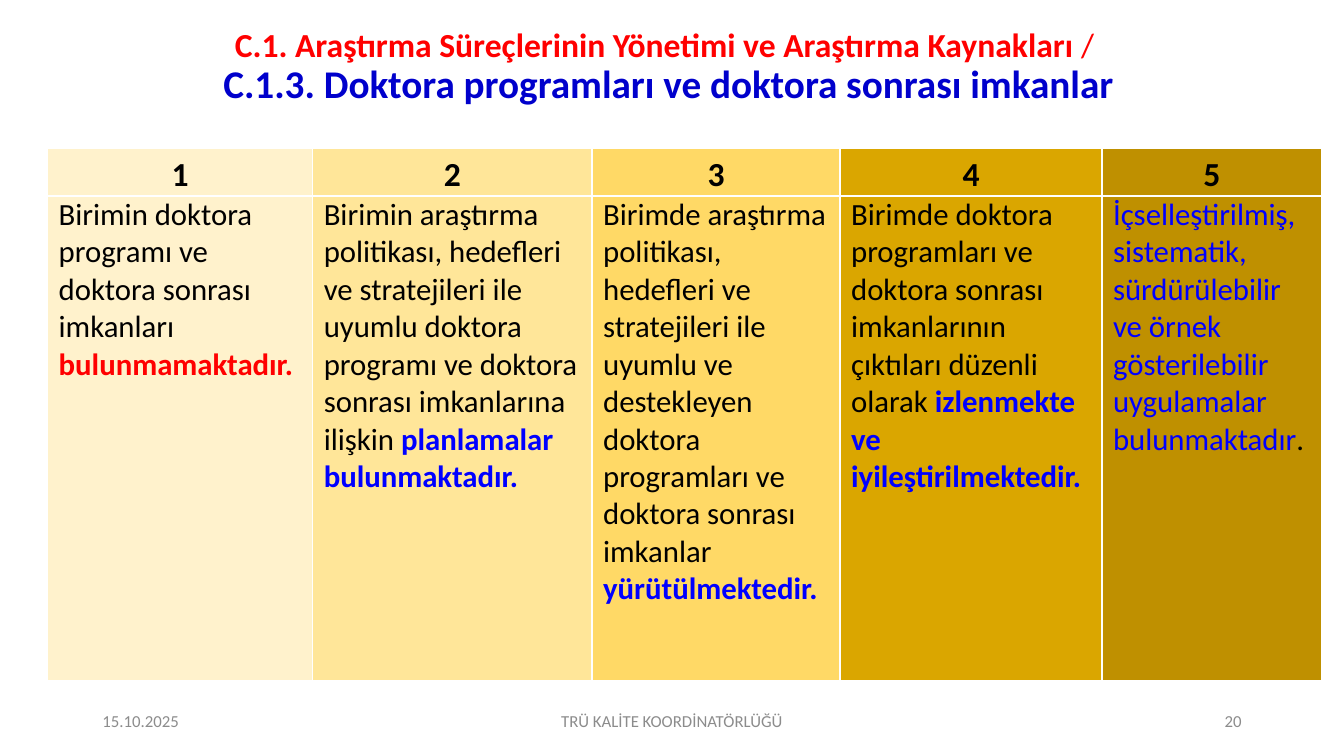
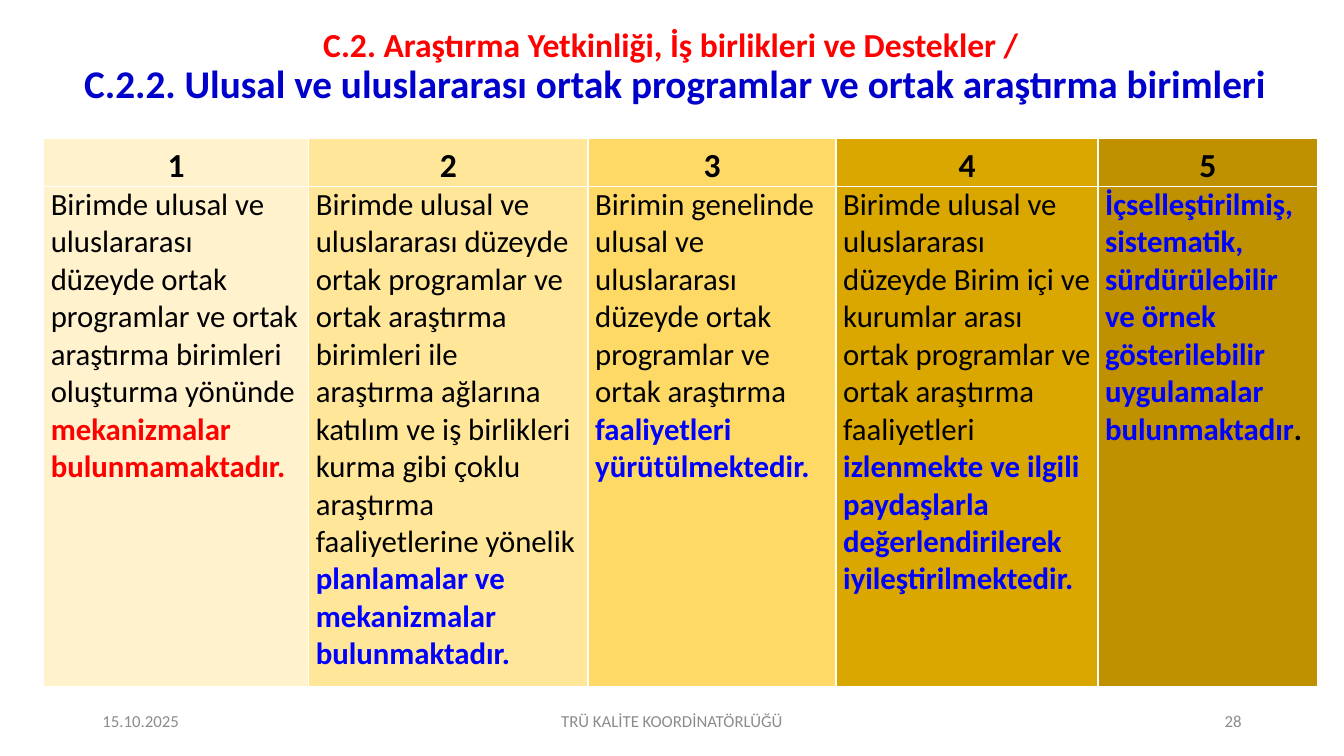
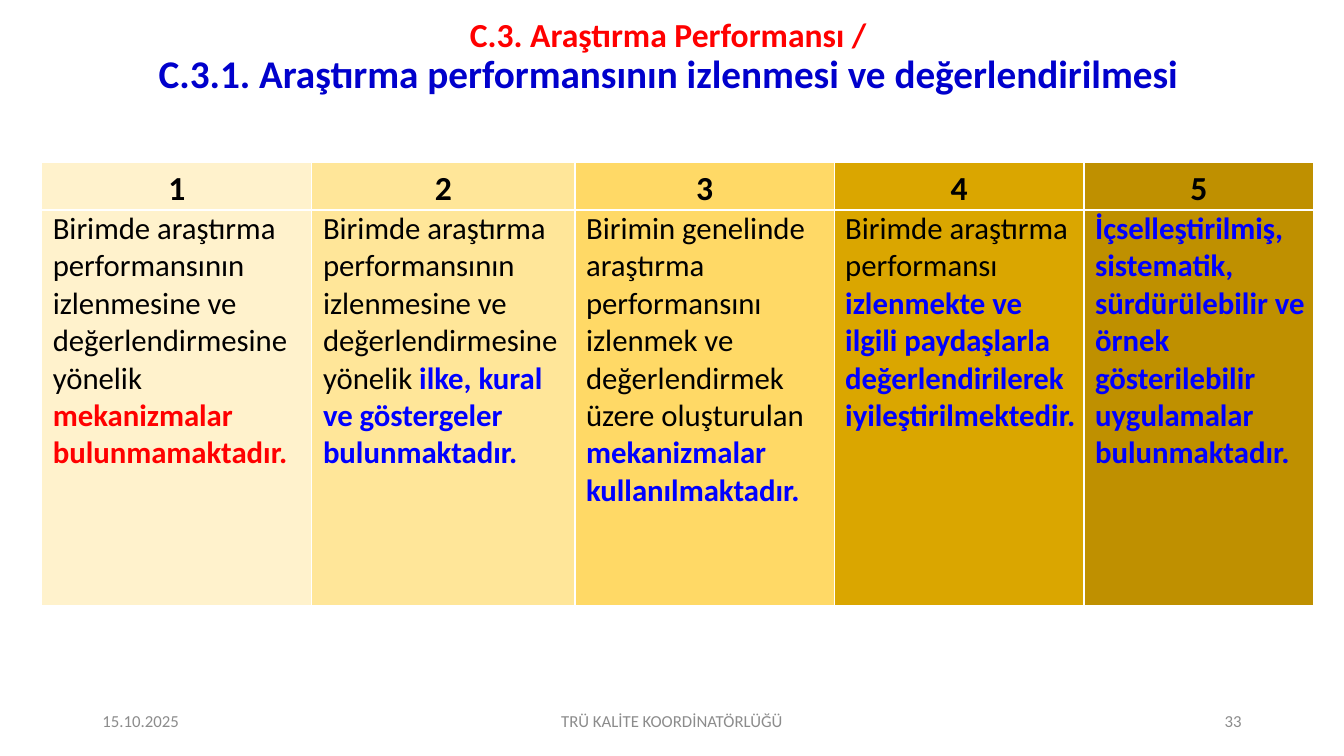
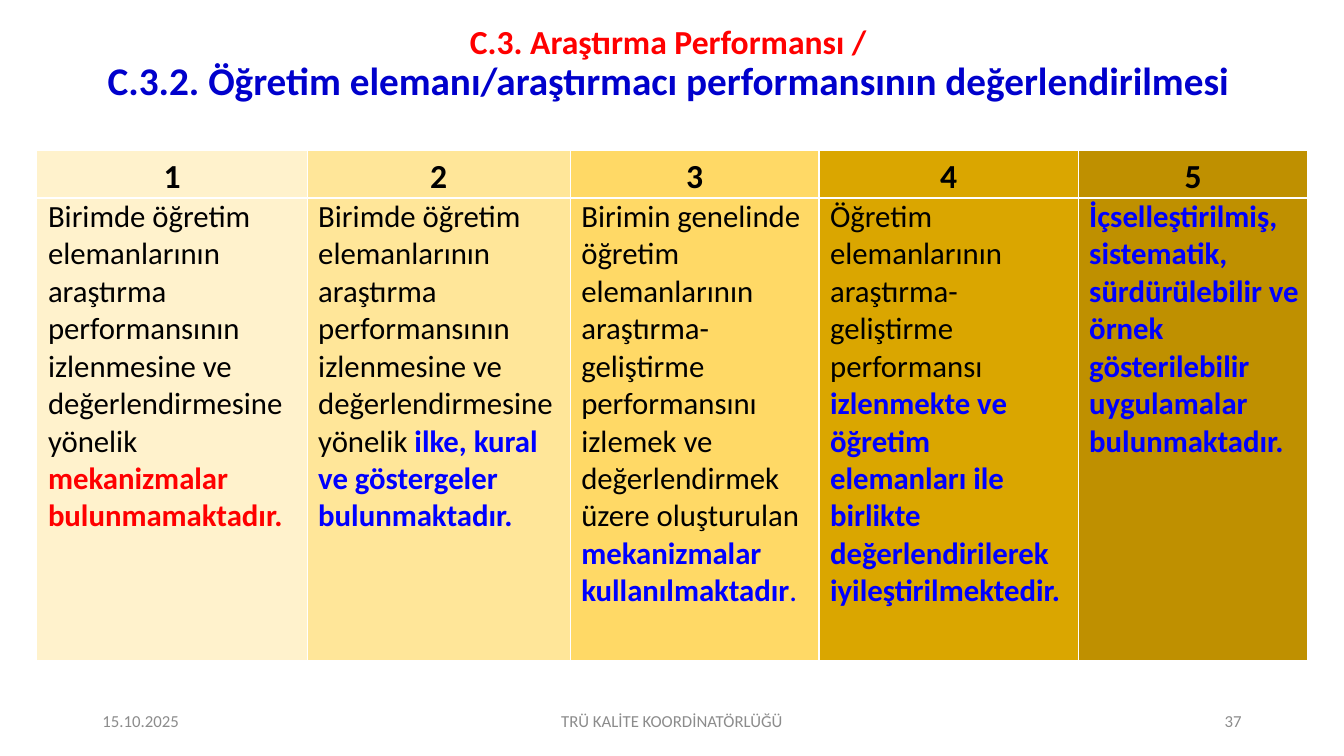
import dataclasses
import typing

import lxml.etree
import pptx
import pptx.dml.color
import pptx.enum.text
import pptx.oxml.ns
import pptx.slide
import pptx.table
import pptx.text.text
import pptx.util

Cm = pptx.util.Cm
Pt = pptx.util.Pt
RGBColor = pptx.dml.color.RGBColor
Align = pptx.enum.text.PP_ALIGN
Anchor = pptx.enum.text.MSO_ANCHOR

# Shared style
FONT = "Calibri"
BLACK = RGBColor(0x00, 0x00, 0x00)
RED = RGBColor(0xFF, 0x00, 0x00)
BLUE = RGBColor(0x00, 0x00, 0xFF)
TITLE_BLUE = RGBColor(0x00, 0x00, 0xCC)
FOOTER_GRAY = RGBColor(0x8C, 0x8C, 0x8C)
WHITE = RGBColor(0xFF, 0xFF, 0xFF)
LEVEL_FILLS = (
    RGBColor(0xFF, 0xF2, 0xCC),
    RGBColor(0xFF, 0xE6, 0x99),
    RGBColor(0xFF, 0xD9, 0x66),
    RGBColor(0xDA, 0xA6, 0x00),
    RGBColor(0xBF, 0x90, 0x00),
)

HEADER_HEIGHT = 1.19
CELL_MARGIN = 0.18
BODY_INDENT = 0.1
FOOTER_TOP, FOOTER_HEIGHT = 17.65, 1.02
DATE = "15.10.2025"
OFFICE = "TRÜ KALİTE KOORDİNATÖRLÜĞÜ"
TITLE_ONLY_LAYOUT = 5


class Part(typing.NamedTuple):
    """A stretch of text with its own colour and weight."""
    text: str
    color: RGBColor = BLACK
    bold: bool = False


class Box(typing.NamedTuple):
    """A place on the slide, in centimetres."""
    left: float
    top: float
    width: float
    height: float


@dataclasses.dataclass
class Rubric:
    """One slide: a criterion and its five maturity levels."""
    number: int
    title_box: Box
    heading: list[Part]
    criterion: str
    table_left: float
    table_top: float
    column_widths: tuple[float, ...]
    body_height: float
    levels: list[list[Part]]
    indent: float = BODY_INDENT


def missing(text: str) -> Part:
    return Part(text, RED, True)


def reached(text: str) -> Part:
    return Part(text, BLUE, True)


FIRST_COLUMNS = (6.68, 7.04, 6.25, 6.6, 5.54)
EXEMPLARY = ("İçselleştirilmiş, sistematik, sürdürülebilir ve örnek "
             "gösterilebilir uygulamalar bulunmaktadır")
PERFORMANCE_HEADING = [Part("C.3. Araştırma Performansı /", RED, True)]

RUBRICS = [
    Rubric(
        number=20,
        title_box=Box(0, 0.58, 33.68, 2.26),
        heading=[
            Part("C.1. Araştırma Süreçlerinin Yönetimi ve Araştırma Kaynakları ", RED, True),
            Part("/ ", RED),
        ],
        criterion="C.1.3. Doktora programları ve doktora sonrası imkanlar",
        table_left=1.2,
        table_top=3.75,
        column_widths=FIRST_COLUMNS,
        body_height=12.2,
        levels=[
            [Part("Birimin doktora programı ve doktora sonrası imkanları "),
             missing("bulunmamaktadır.")],
            [Part("Birimin araştırma politikası, hedefleri ve stratejileri ile uyumlu "
                  "doktora programı ve doktora sonrası imkanlarına ilişkin "),
             reached("planlamalar bulunmaktadır.")],
            [Part("Birimde araştırma politikası, hedefleri ve stratejileri ile uyumlu ve "
                  "destekleyen doktora programları ve doktora sonrası imkanlar "),
             reached("yürütülmektedir.")],
            [Part("Birimde doktora programları ve doktora sonrası imkanlarının "
                  "çıktıları düzenli olarak "),
             reached("izlenmekte ve iyileştirilmektedir.")],
            [Part(EXEMPLARY, BLUE), Part(".")],
        ],
    ),
    Rubric(
        number=28,
        title_box=Box(0.33, 0.58, 33.35, 2.26),
        heading=[Part("C.2. Araştırma Yetkinliği, İş birlikleri ve Destekler / ", RED, True)],
        criterion="C.2.2. Ulusal ve uluslararası ortak programlar ve ortak araştırma birimleri",
        table_left=1.1,
        table_top=3.5,
        column_widths=FIRST_COLUMNS,
        body_height=12.6,
        indent=0,
        levels=[
            [Part("Birimde ulusal ve uluslararası düzeyde ortak programlar ve ortak "
                  "araştırma birimleri oluşturma yönünde "),
             missing("mekanizmalar bulunmamaktadır.")],
            [Part("Birimde ulusal ve uluslararası düzeyde ortak programlar ve ortak "
                  "araştırma birimleri ile araştırma ağlarına katılım ve iş birlikleri "
                  "kurma gibi çoklu araştırma faaliyetlerine yönelik "),
             reached("planlamalar ve mekanizmalar bulunmaktadır.")],
            [Part("Birimin genelinde ulusal ve uluslararası düzeyde ortak programlar ve "
                  "ortak araştırma "),
             reached("faaliyetleri yürütülmektedir.")],
            [Part("Birimde ulusal ve uluslararası düzeyde Birim içi ve kurumlar arası "
                  "ortak programlar ve ortak araştırma faaliyetleri "),
             reached("izlenmekte ve ilgili paydaşlarla değerlendirilerek "
                     "iyileştirilmektedir.")],
            [reached(EXEMPLARY), Part(".", BLACK, True)],
        ],
    ),
    Rubric(
        number=33,
        title_box=Box(0, 0.66, 33.68, 1.6),
        heading=PERFORMANCE_HEADING,
        criterion="C.3.1. Araştırma performansının izlenmesi ve değerlendirilmesi",
        table_left=1.05,
        table_top=4.1,
        column_widths=(6.81, 6.63, 6.53, 6.3, 5.79),
        body_height=9.96,
        levels=[
            [Part("Birimde araştırma performansının izlenmesine ve değerlendirmesine yönelik "),
             missing("mekanizmalar bulunmamaktadır.")],
            [Part("Birimde araştırma performansının izlenmesine ve değerlendirmesine yönelik "),
             reached("ilke, kural ve göstergeler bulunmaktadır.")],
            [Part("Birimin genelinde araştırma performansını izlenmek ve değerlendirmek "
                  "üzere oluşturulan "),
             reached("mekanizmalar kullanılmaktadır.")],
            [Part("Birimde araştırma performansı "),
             reached("izlenmekte ve ilgili paydaşlarla değerlendirilerek "
                     "iyileştirilmektedir.")],
            [reached(EXEMPLARY + ".")],
        ],
    ),
    Rubric(
        number=37,
        title_box=Box(0, 0.48, 33.68, 2.29),
        heading=PERFORMANCE_HEADING,
        criterion="C.3.2. Öğretim elemanı/araştırmacı performansının değerlendirilmesi",
        table_left=0.93,
        table_top=3.8,
        column_widths=(6.81, 6.63, 6.27, 6.53, 5.79),
        body_height=11.66,
        levels=[
            [Part("Birimde öğretim elemanlarının araştırma performansının izlenmesine ve "
                  "değerlendirmesine yönelik "),
             missing("mekanizmalar bulunmamaktadır.")],
            [Part("Birimde öğretim elemanlarının araştırma performansının izlenmesine ve "
                  "değerlendirmesine yönelik "),
             reached("ilke, kural ve göstergeler bulunmaktadır.")],
            [Part("Birimin genelinde öğretim elemanlarının araştırma-geliştirme "
                  "performansını izlemek ve değerlendirmek üzere oluşturulan "),
             reached("mekanizmalar kullanılmaktadır"), Part(".", BLUE)],
            [Part("Öğretim elemanlarının araştırma-geliştirme performansı "),
             reached("izlenmekte ve öğretim elemanları ile birlikte değerlendirilerek "
                     "iyileştirilmektedir.")],
            [reached(EXEMPLARY + ".")],
        ],
    ),
]


def write_parts(paragraph: pptx.text.text._Paragraph, parts: list[Part], size: int) -> None:
    for part in parts:
        run = paragraph.add_run()
        run.text = part.text
        run.font.name = FONT
        run.font.size = Pt(size)
        run.font.bold = part.bold
        run.font.color.rgb = part.color


def add_title(slide: pptx.slide.Slide, rubric: Rubric) -> None:
    title = slide.shapes.title
    title.left, title.top, title.width, title.height = map(Cm, rubric.title_box)
    frame = title.text_frame
    frame.word_wrap = True
    frame.auto_size = pptx.enum.text.MSO_AUTO_SIZE.NONE
    frame.vertical_anchor = Anchor.MIDDLE
    lines = ((rubric.heading, 24), ([Part(rubric.criterion, TITLE_BLUE, True)], 28))
    for index, (parts, size) in enumerate(lines):
        paragraph = frame.add_paragraph() if index else frame.paragraphs[0]
        paragraph.alignment = Align.CENTER
        paragraph.line_spacing = 0.9
        write_parts(paragraph, parts, size)


def add_footer(slide: pptx.slide.Slide, number: int) -> None:
    footers = (
        (2.33, 7.62, DATE, Align.LEFT),
        (11.22, 11.43, OFFICE, Align.CENTER),
        (23.92, 7.62, str(number), Align.RIGHT),
    )
    for left, width, text, alignment in footers:
        shape = slide.shapes.add_textbox(
            Cm(left), Cm(FOOTER_TOP), Cm(width), Cm(FOOTER_HEIGHT))
        frame = shape.text_frame
        frame.word_wrap = True
        frame.vertical_anchor = Anchor.MIDDLE
        frame.paragraphs[0].alignment = alignment
        write_parts(frame.paragraphs[0], [Part(text, FOOTER_GRAY)], 12)


def style_cell(cell: pptx.table._Cell, fill: RGBColor, indent: float = 0) -> None:
    # Borders come before the fill in the cell properties
    properties = cell._tc.get_or_add_tcPr()
    qualified = pptx.oxml.ns.qn
    for side in ("a:lnL", "a:lnR", "a:lnT", "a:lnB"):
        line = lxml.etree.SubElement(properties, qualified(side), w=str(Pt(1)))
        solid = lxml.etree.SubElement(line, qualified("a:solidFill"))
        lxml.etree.SubElement(solid, qualified("a:srgbClr"), val=str(WHITE))
    cell.fill.solid()
    cell.fill.fore_color.rgb = fill
    cell.margin_left = Cm(CELL_MARGIN + indent)
    cell.margin_right = Cm(CELL_MARGIN)
    cell.margin_top = cell.margin_bottom = 0


def add_levels_table(slide: pptx.slide.Slide, rubric: Rubric) -> None:
    table = slide.shapes.add_table(
        2, len(rubric.levels), Cm(rubric.table_left), Cm(rubric.table_top),
        Cm(sum(rubric.column_widths)), Cm(HEADER_HEIGHT + rubric.body_height)).table
    table.first_row = False
    table.horz_banding = False
    table.rows[0].height = Cm(HEADER_HEIGHT)
    table.rows[1].height = Cm(rubric.body_height)

    columns = zip(rubric.column_widths, LEVEL_FILLS, rubric.levels)
    for index, (width, fill, parts) in enumerate(columns):
        table.columns[index].width = Cm(width)

        # Level number
        header = table.cell(0, index)
        style_cell(header, fill)
        header.vertical_anchor = Anchor.BOTTOM
        paragraph = header.text_frame.paragraphs[0]
        paragraph.alignment = Align.CENTER
        paragraph.line_spacing = 1.15
        write_parts(paragraph, [Part(str(index + 1), BLACK, True)], 24)

        # Level description
        body = table.cell(1, index)
        style_cell(body, fill, rubric.indent)
        body.vertical_anchor = Anchor.TOP
        write_parts(body.text_frame.paragraphs[0], parts, 22)


def main() -> None:
    presentation = pptx.Presentation()
    presentation.slide_width = Cm(33.87)
    presentation.slide_height = Cm(19.05)
    layout = presentation.slide_layouts[TITLE_ONLY_LAYOUT]
    for rubric in RUBRICS:
        slide = presentation.slides.add_slide(layout)
        add_title(slide, rubric)
        add_footer(slide, rubric.number)
        add_levels_table(slide, rubric)
    presentation.save("out.pptx")


if __name__ == "__main__":
    main()
